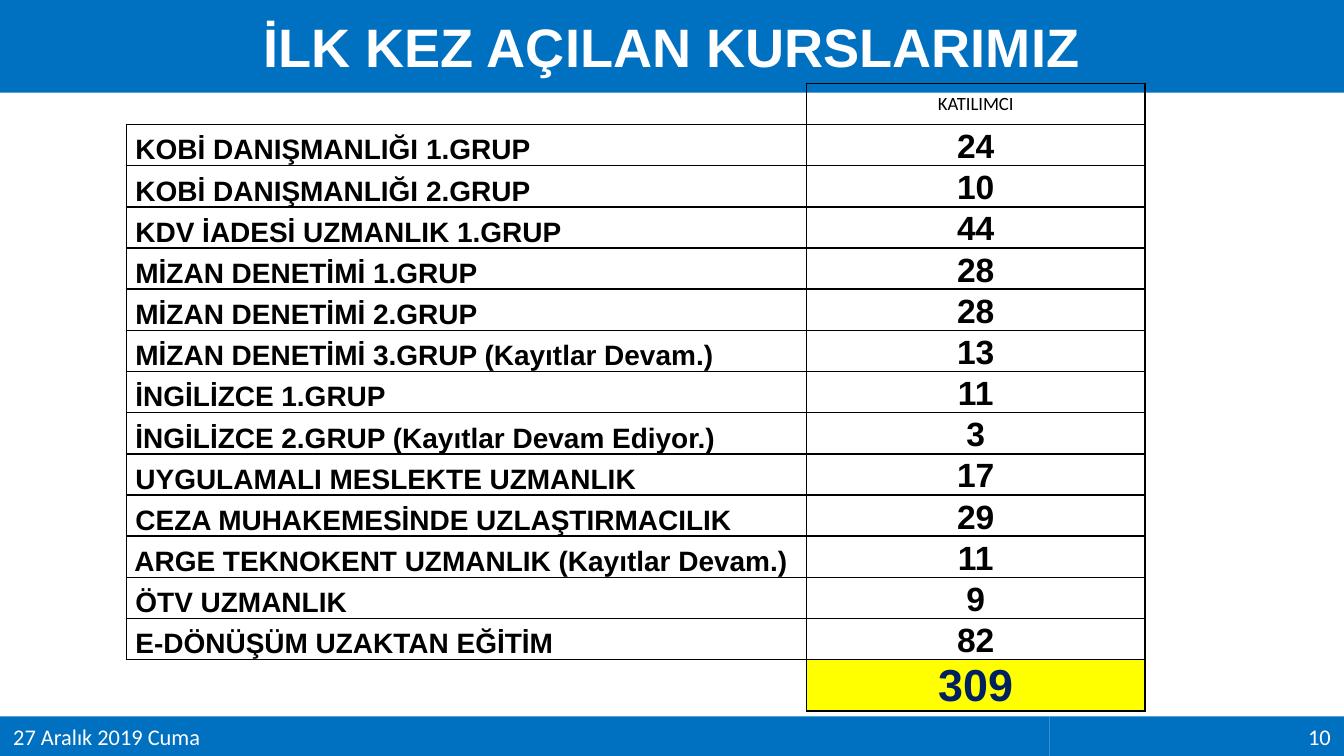
from dataclasses import dataclass

import pptx
import pptx.dml.color
import pptx.enum.shapes
import pptx.enum.text
import pptx.oxml.ns
import pptx.util
from lxml import etree

Inches = pptx.util.Inches
RGBColor = pptx.dml.color.RGBColor
Align = pptx.enum.text.PP_ALIGN
Anchor = pptx.enum.text.MSO_ANCHOR
qn = pptx.oxml.ns.qn

BLUE = RGBColor(0x00, 0x70, 0xC0)
WHITE = RGBColor(0xFF, 0xFF, 0xFF)
BLACK = RGBColor(0x00, 0x00, 0x00)
NAVY = RGBColor(0x00, 0x20, 0x60)
YELLOW = RGBColor(0xFF, 0xFF, 0x00)

WIDTH = 10
HEIGHT = WIDTH * 9 / 16
TITLE_HEIGHT = 0.69
FOOTER_TOP = 5.33
FOOTER_SPLIT = 7.81
TABLE_LEFT, TABLE_TOP, TOTAL_TOP = 0.94, 0.62, 4.91
COLUMNS = (5.06, 2.52)
TOTAL_HEIGHT = 0.38


@dataclass
class Course:
    name: str
    participants: int


COURSES = [
    Course(" KOBİ DANIŞMANLIĞI 1.GRUP", 24),
    Course(" KOBİ DANIŞMANLIĞI 2.GRUP", 10),
    Course(" KDV İADESİ UZMANLIK 1.GRUP", 44),
    Course(" MİZAN DENETİMİ 1.GRUP", 28),
    Course(" MİZAN DENETİMİ 2.GRUP", 28),
    Course(" MİZAN DENETİMİ 3.GRUP (Kayıtlar Devam.)", 13),
    Course(" İNGİLİZCE 1.GRUP", 11),
    Course(" İNGİLİZCE 2.GRUP (Kayıtlar Devam Ediyor.)", 3),
    Course(" UYGULAMALI MESLEKTE UZMANLIK", 17),
    Course(" CEZA MUHAKEMESİNDE UZLAŞTIRMACILIK", 29),
    Course(" ARGE TEKNOKENT UZMANLIK (Kayıtlar Devam.)", 11),
    Course(" ÖTV UZMANLIK", 9),
    Course(" E-DÖNÜŞÜM UZAKTAN EĞİTİM", 82),
]


def write(frame, text: str, *, size: float, color=BLACK, font="Arial",
          bold=True, align=Align.LEFT) -> None:
    para = frame.paragraphs[0]
    para.alignment = align
    span = para.add_run()
    span.text = text
    span.font.size = pptx.util.Pt(size)
    span.font.name = font
    span.font.bold = bold
    span.font.color.rgb = color


def place(shape, left: float, top: float, width: float, height: float) -> None:
    shape.left, shape.top = Inches(left), Inches(top)
    shape.width, shape.height = Inches(width), Inches(height)


def add_footer(page, text: str, left: float, right: float, align) -> None:
    band = page.shapes.add_shape(
        pptx.enum.shapes.MSO_SHAPE.RECTANGLE, Inches(left), Inches(FOOTER_TOP),
        Inches(right - left), Inches(HEIGHT - FOOTER_TOP))
    band.shadow.inherit = False
    band.fill.solid()
    band.fill.fore_color.rgb = BLUE
    band.line.fill.background()
    band.text_frame.vertical_anchor = Anchor.MIDDLE
    write(band.text_frame, text, size=12, color=WHITE, font="Calibri",
          bold=False, align=align)


def set_borders(cell, sides: str) -> None:
    """Draw the sides named by L, R, T and B, and clear the others."""
    properties = cell._tc.get_or_add_tcPr()
    for side in "LRTB":
        line = etree.SubElement(properties, qn(f"a:ln{side}"), w="12700")
        if side in sides:
            fill = etree.SubElement(line, qn("a:solidFill"))
            etree.SubElement(fill, qn("a:srgbClr"), val=str(BLACK))
        else:
            etree.SubElement(line, qn("a:noFill"))


def fill_cell(cell, text: str, *, sides="LRTB", anchor=Anchor.BOTTOM,
              fill=None, **text_format) -> None:
    cell.margin_left = cell.margin_right = cell.margin_top = Inches(0.01)
    cell.margin_bottom = 0
    cell.vertical_anchor = anchor
    set_borders(cell, sides)
    if fill is None:
        cell.fill.background()
    else:
        cell.fill.solid()
        cell.fill.fore_color.rgb = fill
    if text:
        write(cell.text_frame, text, **text_format)
    else:
        # Keep an empty cell from stretching its row
        etree.SubElement(cell.text_frame.paragraphs[0]._p,
                         qn("a:endParaRPr"), sz="1000")


def add_course_table(page) -> None:
    row_count = len(COURSES) + 2
    row_height = (TOTAL_TOP - TABLE_TOP) / (row_count - 1)
    table = page.shapes.add_table(
        row_count, len(COLUMNS), Inches(TABLE_LEFT), Inches(TABLE_TOP),
        Inches(sum(COLUMNS)),
        Inches(TOTAL_TOP + TOTAL_HEIGHT - TABLE_TOP)).table
    table.first_row = table.horz_banding = False
    for column, width in zip(table.columns, COLUMNS):
        column.width = Inches(width)
    for row in table.rows:
        row.height = Inches(row_height)
    table.rows[row_count - 1].height = Inches(TOTAL_HEIGHT)

    # Heading
    fill_cell(table.cell(0, 0), "", sides="RB")
    fill_cell(table.cell(0, 1), "KATILIMCI", anchor=Anchor.MIDDLE, size=10,
              font="Calibri", bold=False, align=Align.CENTER)

    # Courses
    for index, course in enumerate(COURSES, start=1):
        fill_cell(table.cell(index, 0), course.name, size=15)
        fill_cell(table.cell(index, 1), str(course.participants), size=18,
                  align=Align.CENTER)

    # Total
    total = sum(course.participants for course in COURSES)
    fill_cell(table.cell(row_count - 1, 0), "", sides="TR")
    fill_cell(table.cell(row_count - 1, 1), str(total), fill=YELLOW, size=24,
              color=NAVY, align=Align.CENTER)


def main() -> None:
    deck = pptx.Presentation()
    deck.slide_width, deck.slide_height = Inches(WIDTH), Inches(HEIGHT)
    page = deck.slides.add_slide(deck.slide_layouts.get_by_name("Title Only"))

    # Title band
    title = page.shapes.title
    place(title, 0, 0, WIDTH, TITLE_HEIGHT)
    title.fill.solid()
    title.fill.fore_color.rgb = BLUE
    title.text_frame.auto_size = pptx.enum.text.MSO_AUTO_SIZE.NONE
    title.text_frame.vertical_anchor = Anchor.MIDDLE
    write(title.text_frame, "İLK KEZ AÇILAN KURSLARIMIZ", size=29,
          color=WHITE, align=Align.CENTER)

    # Footer bands
    add_footer(page, "27 Aralık 2019 Cuma", 0, FOOTER_SPLIT, Align.LEFT)
    add_footer(page, "10", FOOTER_SPLIT, WIDTH, Align.RIGHT)

    add_course_table(page)
    deck.save("out.pptx")


if __name__ == "__main__":
    main()
